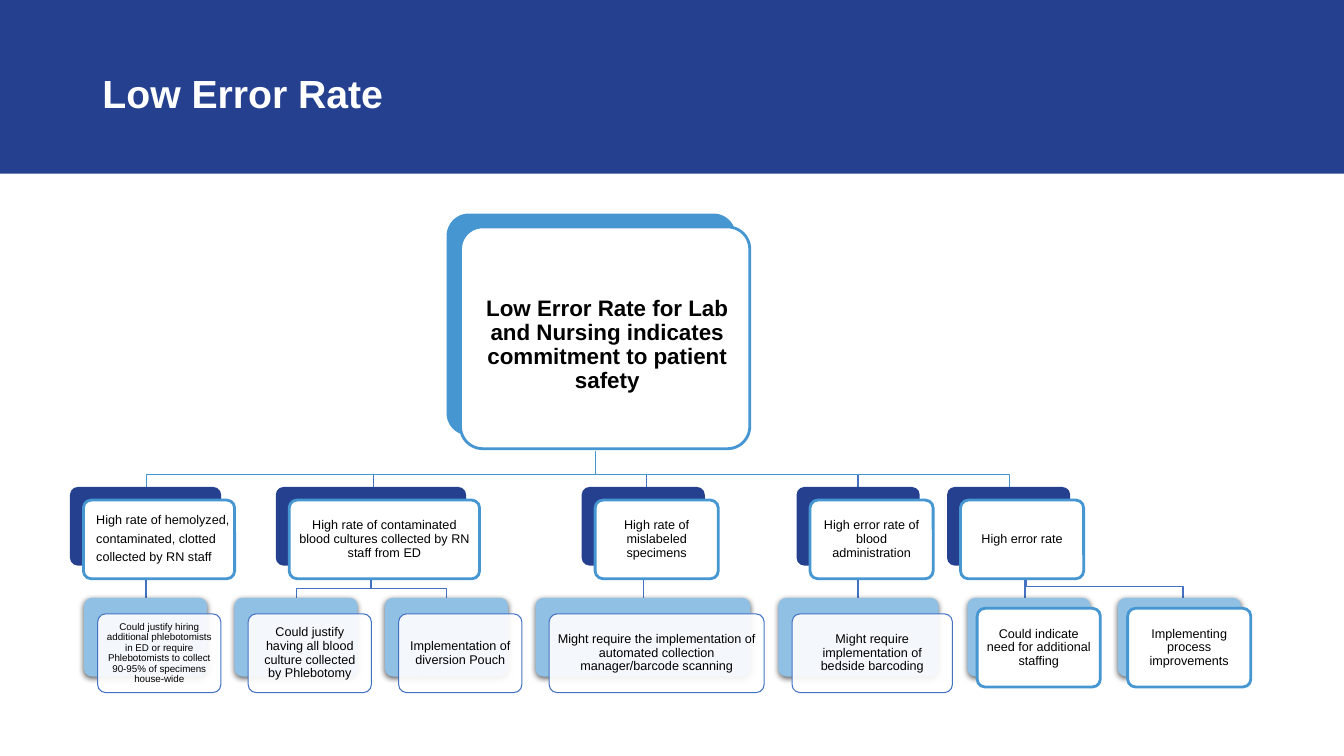
from lxml.etree import SubElement
from pptx import Presentation
from pptx.dml.color import RGBColor
from pptx.enum.shapes import MSO_CONNECTOR as Link, MSO_SHAPE as Shape
from pptx.enum.text import MSO_ANCHOR as Anchor, PP_ALIGN as Align
from pptx.oxml import parse_xml
from pptx.oxml.ns import nsdecls, qn
from pptx.util import Pt

NAVY, BLUE, SKY, EDGE = "25408F", "4696D2", "90C0E4", "4372C3"
WHITE, BLACK = "FFFFFF", "000000"
HIGH = 56.2  # height of the small cards

# Second row: left, width, text
CAUSES = [
    (50, 108, "High rate of hemolyzed, contaminated, clotted collected by RN staff"),
    (197, 136, "High rate of contaminated blood cultures collected by RN staff from ED"),
    (415.5, 88, "High rate of mislabeled specimens"),
    (569, 88, "High error rate of blood administration"),
    (676.5, 88, "High error rate"),
]
# Third row: left, width, text, size
ACTIONS = [
    (60, 88, "Could justify hiring additional phlebotomists in ED or require "
     "Phlebotomists to collect 90-95% of specimens house-wide", 7),
    (167.5, 88, "Could justify\vhaving all blood culture collected by Phlebotomy", 9),
    (275, 88, "Implementation of diversion Pouch", 9),
    (382.5, 153.5, "Might require the implementation of automated collection "
     "manager/barcode scanning", 9),
    (556, 114.5, "Might require implementation of\vbedside barcoding", 9),
]
FIXES = [
    (691, 88, "Could indicate need for additional staffing"),
    (798.5, 88, "Implementing process improvements"),
]
# Straight links: x, top, bottom
DROPS = [(267, 339, 365), (462, 339, 365), (613, 339, 365),
         (104.4, 403, 429), (459.5, 403, 429), (613, 403, 429), (732.2, 408, 433.5)]
# Bent links: start x, top, bar y, end x, bottom, colour, weight
BENDS = [(425.5, 322, 339, 104.4, 348, BLUE, 0.75),
         (425.5, 322, 339, 720.8, 348, BLUE, 0.75),
         (265, 403, 420.5, 212, 429, EDGE, 1),
         (265, 403, 420.5, 319, 429, EDGE, 1),
         (733, 402, 419, 845, 427, EDGE, 1)]


def color(code):
    return RGBColor.from_string(code)


def block(slide, kind, x, y, w, h, fill, line=None, weight=2):
    box = slide.shapes.add_shape(kind, Pt(x), Pt(y), Pt(w), Pt(h))
    box.shadow.inherit = False
    box.fill.solid()
    box.fill.fore_color.rgb = color(fill)
    if line:
        box.line.color.rgb = color(line)
        box.line.width = Pt(weight)
    else:
        box.line.fill.background()
    if kind == Shape.ROUNDED_RECTANGLE:
        box.adjustments[0] = 0.1
    return box


def card(slide, x, y, w, h, shift, back, text, size=9, pale=False, bold=False):
    """A back plate and a shifted front plate that holds the text."""
    kind = Shape.ROUNDED_RECTANGLE
    plate = block(slide, kind, x, y, w, h, back)
    line, weight = (EDGE, 0.75) if pale else (BLUE, 2)
    front = block(slide, kind, x + shift[0], y + shift[1], w, h, WHITE, line, weight)
    if pale:
        tone = front.fill._xPr.find(".//" + qn("a:srgbClr"))
        SubElement(tone, qn("a:alpha")).set("val", "90000")
    frame = front.text_frame
    frame.word_wrap = True
    frame.vertical_anchor = Anchor.MIDDLE
    frame.margin_left = frame.margin_right = Pt(4 if pale else 5)
    frame.margin_top = frame.margin_bottom = Pt(3)
    frame.text = text
    for para in frame.paragraphs:
        para.alignment = Align.CENTER
        para.line_spacing = 0.9
        style(para, size, BLACK, bold)
    return plate, front


def style(para, size, tint, bold):
    font = para.font
    font.name, font.size, font.bold = "Arial", Pt(size), bold
    font.color.rgb = color(tint)


def shade(shape):
    """Soft shadow below a plate."""
    old = shape._element.spPr.find(qn("a:effectLst"))
    old.append(parse_xml(
        f'<a:outerShdw {nsdecls("a")} blurRad="57150" dist="19050" dir="5400000" '
        'algn="ctr" rotWithShape="0"><a:srgbClr val="000000">'
        '<a:alpha val="63000"/></a:srgbClr></a:outerShdw>'))


def drop(slide, x, top, end):
    link = slide.shapes.add_connector(Link.STRAIGHT, Pt(x), Pt(top), Pt(x), Pt(end))
    link.line.color.rgb = color(EDGE)
    link.line.width = Pt(1)
    SubElement(link._element.spPr, qn("a:effectLst"))


def bend(slide, x, top, bar, to, end, tint, weight):
    path = slide.shapes.build_freeform(Pt(x), Pt(top))
    path.add_line_segments(
        [(Pt(x), Pt(bar)), (Pt(to), Pt(bar)), (Pt(to), Pt(end))], close=False)
    link = path.convert_to_shape()
    link.shadow.inherit = False
    link.fill.background()
    link.line.color.rgb = color(tint)
    link.line.width = Pt(weight)


def head(slide, text):
    title = slide.shapes.title
    band = block(slide, Shape.RECTANGLE, 0, 0, 960, 124, NAVY)
    title._element.addprevious(band._element)
    title.left, title.top, title.width, title.height = Pt(66), Pt(33), Pt(828), Pt(104.5)
    frame = title.text_frame
    frame.text = text
    frame.vertical_anchor = Anchor.TOP
    frame.margin_top = Pt(20)
    para = frame.paragraphs[0]
    para.alignment = Align.LEFT
    para.line_spacing = 0.9
    style(para, 28, WHITE, True)


def main():
    deck = Presentation()
    deck.slide_width, deck.slide_height = Pt(960), Pt(540)
    slide = deck.slides.add_slide(deck.slide_layouts[5])
    head(slide, "Low Error Rate")

    # Links lie behind the cards
    for item in DROPS:
        drop(slide, *item)
    for item in BENDS:
        bend(slide, *item)

    # Top card
    _, root = card(slide, 319, 152.6, 206.6, 158.4, (10, 9.5), BLUE,
                   "Low Error Rate for Lab\n"
                   "and Nursing indicates commitment to patient safety", 16, bold=True)
    root.text_frame.margin_top = Pt(14)
    root.text_frame.margin_left = Pt(8)

    # Causes; the first one is set flush left
    fronts = [card(slide, x, 347.8, w, HIGH, (9.6, 9.4), NAVY, text)[1]
              for x, w, text in CAUSES]
    frame = fronts[0].text_frame
    frame.margin_left, frame.margin_right, frame.margin_bottom = Pt(7.5), Pt(2), Pt(7)
    frame.paragraphs[0].alignment = Align.LEFT
    frame.paragraphs[0].line_spacing = 1.2

    # Actions
    for x, w, text, size in ACTIONS:
        shade(card(slide, x, 427, w, HIGH, (9.8, 11.5), SKY, text, size, pale=True)[0])
    for x, w, text in FIXES:
        shade(card(slide, x, 427, w, HIGH, (7, 7.5), SKY, text)[0])

    deck.save("out.pptx")


if __name__ == "__main__":
    main()
